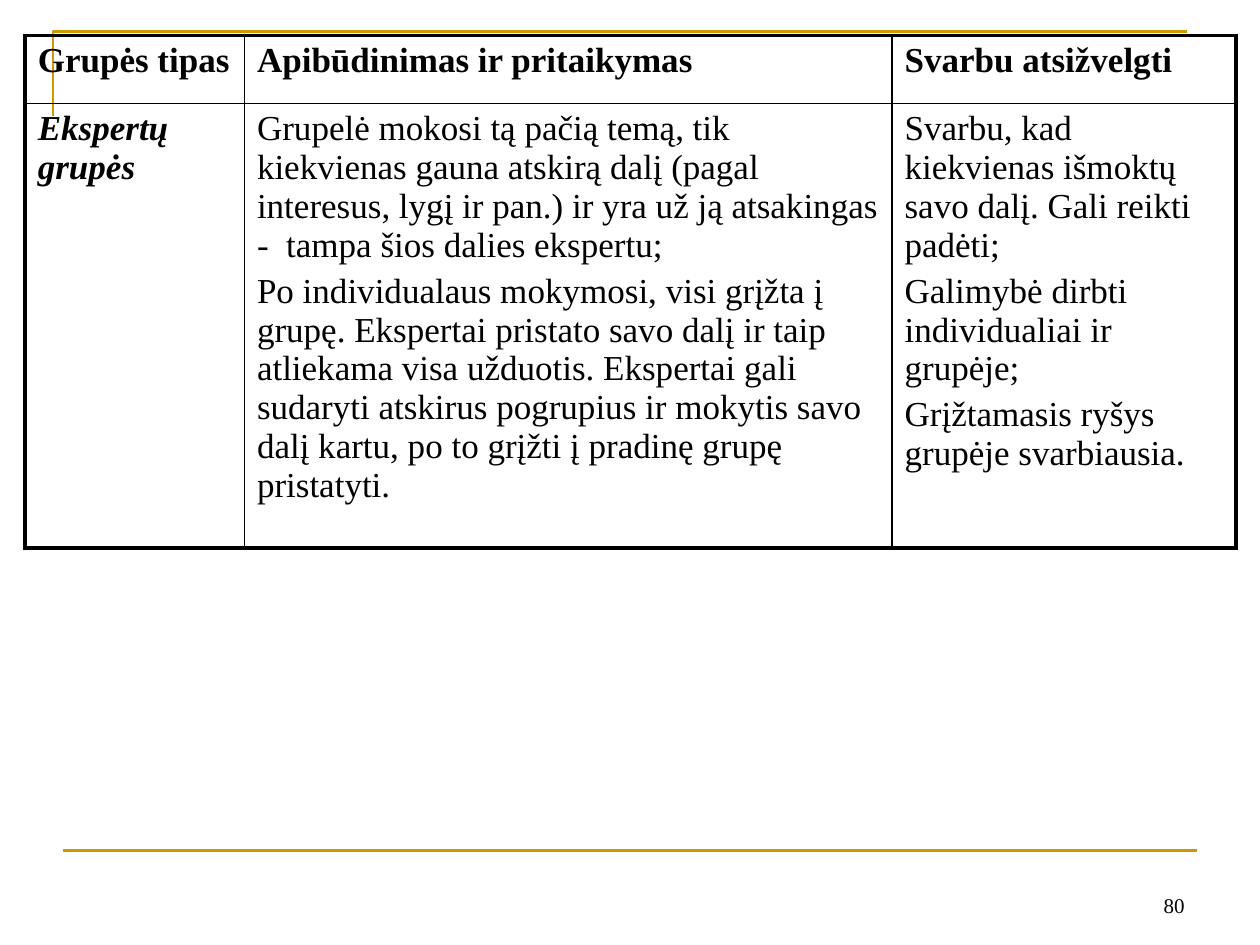
from pptx import Presentation
from pptx import util as u
from pptx.dml.color import RGBColor
from pptx.enum import shapes, text
from pptx.oxml.ns import qn
from lxml import etree

COLORS = {"ink": "000000", "gold": "CC9900"}
FONT = "Times New Roman"
W, H = u.Inches(10), u.Inches(7.5)
COLS = (1.74, 5.14, 2.73)
ROWS = (0.54, 3.53)
THIN, THICK = 1, 2.25
CELLS = [
    [["Grupės tipas"], ["Apibūdinimas ir pritaikymas"], ["Svarbu atsižvelgti"]],
    [
        ["Ekspertų grupės"],
        ["Grupelė mokosi tą pačią temą, tik kiekvienas gauna atskirą dalį (pagal interesus, "
         "lygį ir pan.) ir yra už ją atsakingas -  tampa šios dalies ekspertu;",
         "Po individualaus mokymosi, visi grįžta į grupę. Ekspertai pristato savo dalį ir taip "
         "atliekama visa užduotis. Ekspertai gali sudaryti atskirus pogrupius ir mokytis savo "
         "dalį kartu, po to grįžti į pradinę grupę pristatyti."],
        ["Svarbu, kad kiekvienas išmoktų savo dalį. Gali reikti padėti;",
         "Galimybė dirbti individualiai ir grupėje;",
         "Grįžtamasis ryšys grupėje svarbiausia."],
    ],
]


def rgb(name):
    return RGBColor.from_string(COLORS[name])


def style(p, size, bold=False, italic=False):
    for r in p.runs:
        f = r.font
        f.name, f.size, f.bold, f.italic = FONT, u.Pt(size), bold, italic
        f.color.rgb = rgb("ink")


def gold_line(sp):
    sp.line.color.rgb = rgb("gold")
    sp.line.width = u.Pt(1.5)


def corner(s, x, y, w, h):
    fb = s.shapes.build_freeform(x, y + h)
    fb.add_line_segments([(x, y), (x + w, y)], close=False)
    sp = fb.convert_to_shape()
    sp.shadow.inherit = False
    sp.fill.background()
    gold_line(sp)


def footer(s, x, y, w, h):
    rule = s.shapes.add_connector(shapes.MSO_CONNECTOR.STRAIGHT, x, y, x + w, y)
    etree.SubElement(rule._element.spPr, qn("a:effectLst"))
    gold_line(rule)
    box_w, box_h = u.Inches(2.33), u.Inches(0.5)
    tf = s.shapes.add_textbox(x + w - box_w, y + h - box_h, box_w, box_h).text_frame
    tf.word_wrap = True
    tf.vertical_anchor = text.MSO_ANCHOR.BOTTOM
    p = tf.paragraphs[0]
    p.text = "80"
    p.alignment = text.PP_ALIGN.RIGHT
    style(p, 12)


def borders(cell, widths):
    pr = cell._tc.get_or_add_tcPr()
    for i, (side, width) in enumerate(widths.items()):
        ln = etree.Element(qn(f"a:ln{side}"), w=str(u.Pt(width)))
        fill = etree.SubElement(ln, qn("a:solidFill"))
        etree.SubElement(fill, qn("a:srgbClr"), val=COLORS["ink"])
        pr.insert(i, ln)


def group_table(s, x, y, w, h):
    t = s.shapes.add_table(len(ROWS), len(COLS), x, y, w, h).table
    t.first_row = t.horz_banding = False
    for col, share in zip(t.columns, COLS):
        col.width = int(w * share / sum(COLS))
    for row, share in zip(t.rows, ROWS):
        row.height = int(h * share / sum(ROWS))
    last_row, last_col = len(ROWS) - 1, len(COLS) - 1
    for i, row in enumerate(CELLS):
        for j, lines in enumerate(row):
            cell = t.cell(i, j)
            cell.fill.background()
            cell.text_frame.text = "\n".join(lines)
            for p in cell.text_frame.paragraphs:
                p.space_before = u.Pt(4)
                style(p, 20, bold=i == 0 or j == 0, italic=i > 0 and j == 0)
            borders(cell, {
                "L": THICK if j == 0 else THIN,
                "R": THICK if j == last_col else THIN,
                "T": THICK if i == 0 else THIN,
                "B": THICK if i == last_row else THIN,
            })


def main():
    prs = Presentation()
    prs.slide_width, prs.slide_height = W, H
    s = prs.slides.add_slide(prs.slide_layouts[6])
    corner(s, u.Inches(0.42), H // 30, int(W * 0.9), u.Inches(0.67))
    footer(s, W // 20, int(H * 0.9), int(W * 0.9), u.Inches(0.58))
    group_table(s, W // 50, u.Inches(0.28), u.Inches(sum(COLS)), u.Inches(sum(ROWS)))
    prs.save("out.pptx")


if __name__ == "__main__":
    main()
